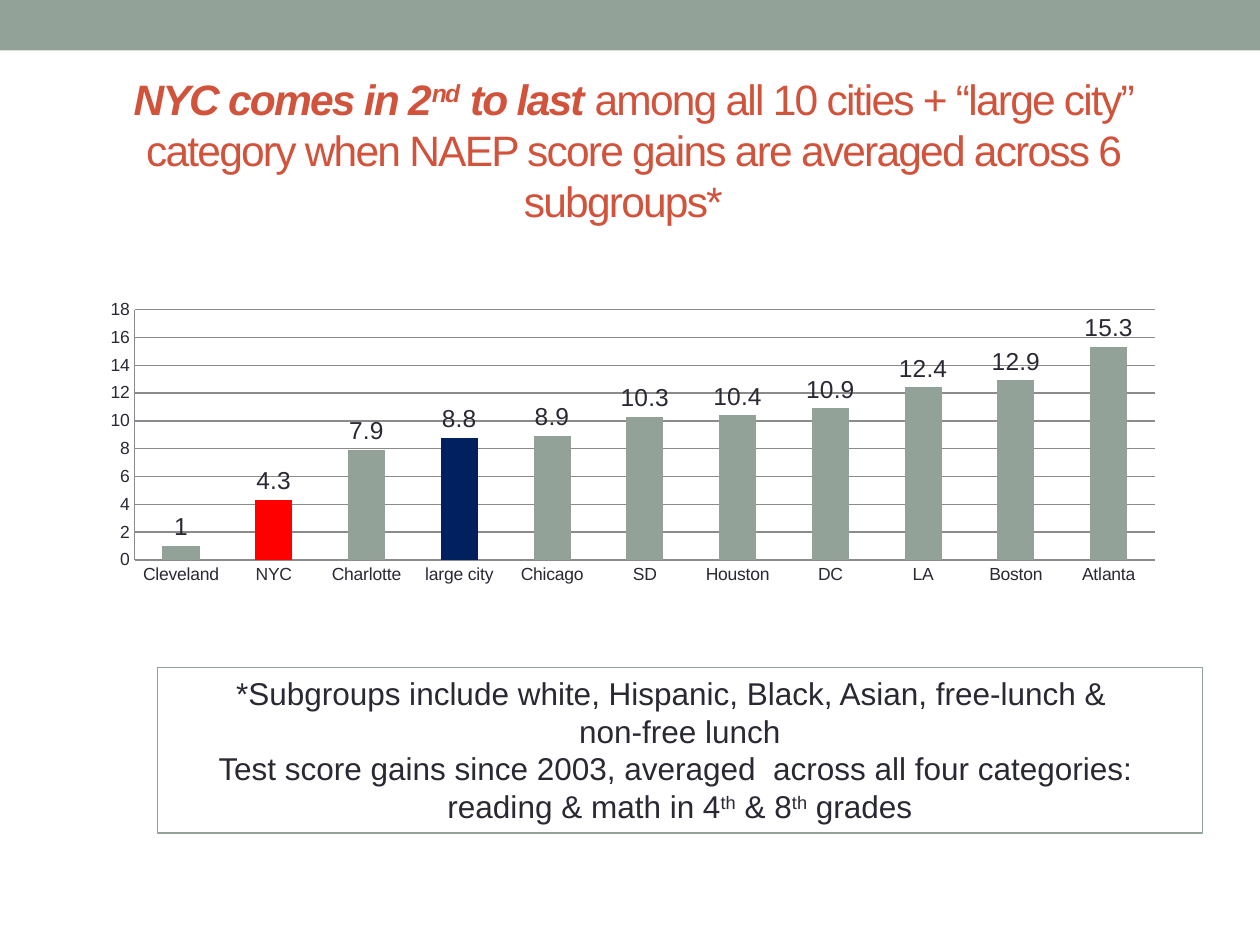
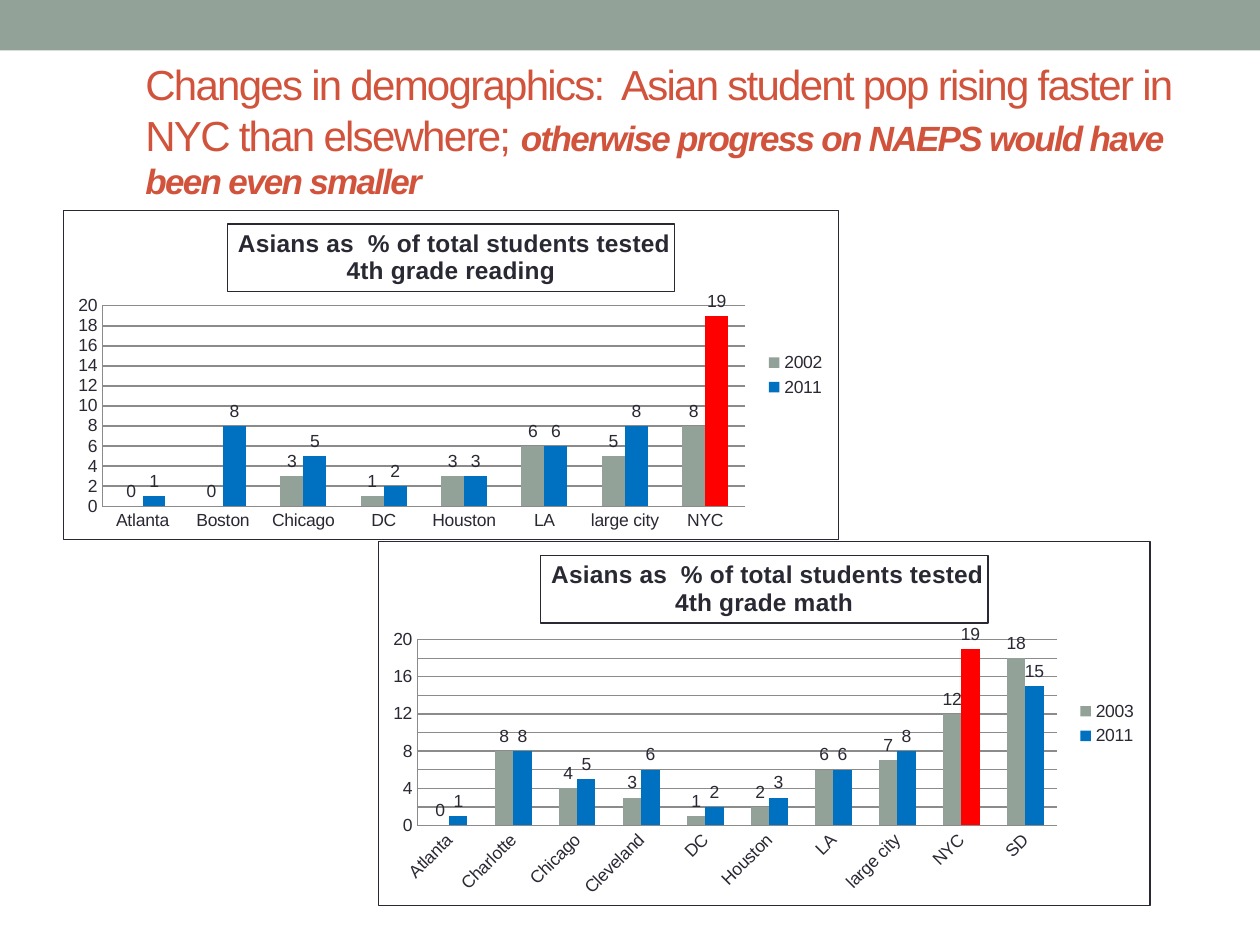
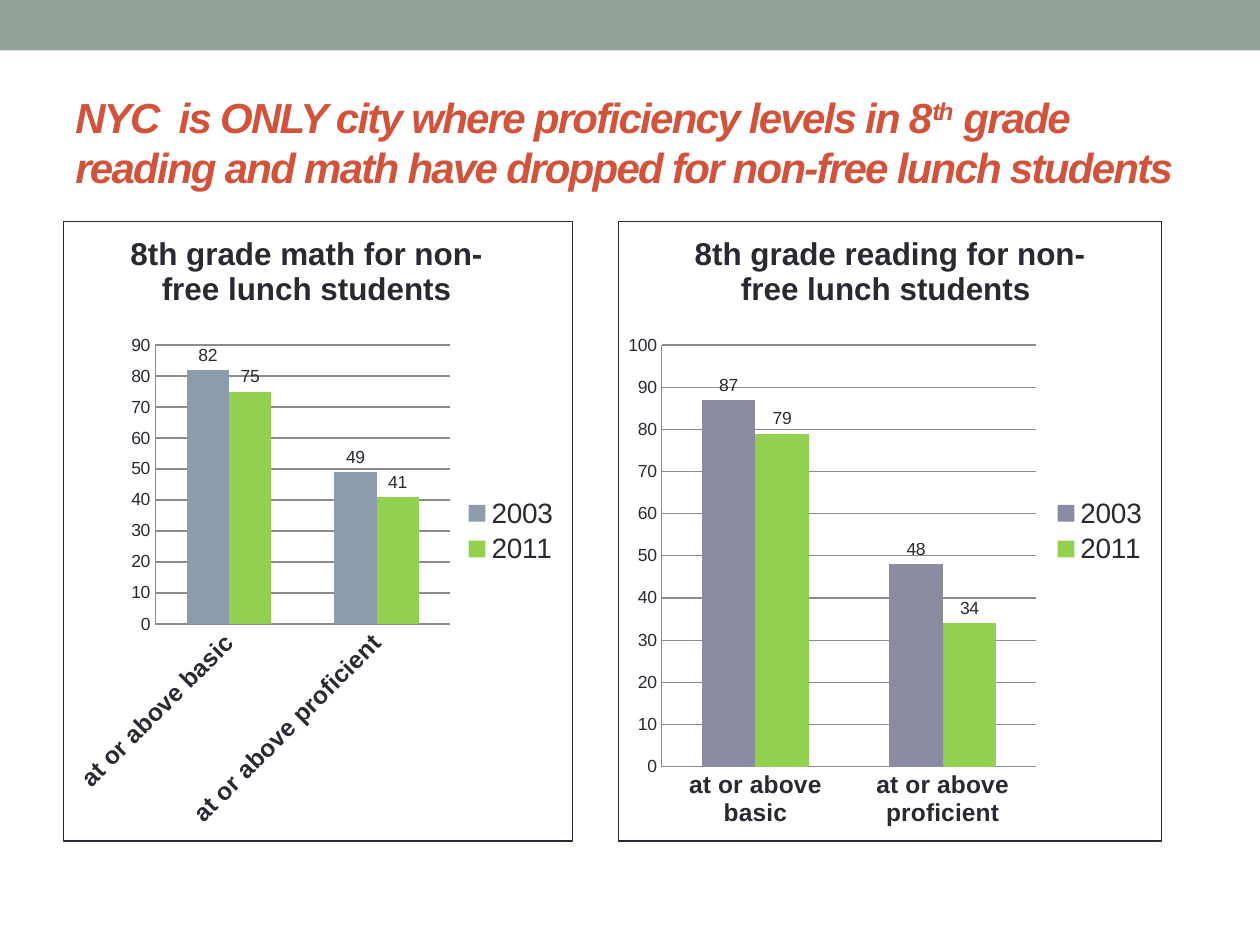
from lxml import etree
from pptx import Presentation
from pptx.chart.data import CategoryChartData
from pptx.dml.color import RGBColor
from pptx.enum import chart as ch, shapes, text
from pptx.oxml import ns
from pptx.util import Pt

# Shared look
FONT = "Arial"
SAGE, RUST, INK, GRID = "93A299", "D2533C", "292934", "8B8B8B"
RED, NAVY, BLUE, LIME = "FF0000", "002060", "0070C0", "92D050"
BASIC = ["at or above basic", "at or above proficient"]


def rgb(code):
    return RGBColor.from_string(code)


def paint(fill, code):
    fill.solid()
    fill.fore_color.rgb = rgb(code)


def stroke(line, code, width=0.75):
    line.color.rgb = rgb(code)
    line.width = Pt(width)


def style(font, size, code=INK, bold=False):
    font.name, font.size, font.bold = FONT, Pt(size), bold
    font.color.rgb = rgb(code)


# Text: each run is (words, size, marks); marks: b bold italic, s superscript
def write(par, runs, code, space=0):
    for words, size, marks in runs:
        run = par.add_run()
        run.text = words
        style(run.font, size, code, "b" in marks)
        run.font.italic = "b" in marks
        props = run._r.get_or_add_rPr()
        if "s" in marks:
            props.set("baseline", "30000")
        if space:
            props.set("spc", str(space * 100))


def add_title(slide, box, runs, align=text.PP_ALIGN.LEFT):
    frame = slide.shapes.add_textbox(*map(Pt, box)).text_frame
    frame.word_wrap = True
    frame.vertical_anchor = text.MSO_ANCHOR.MIDDLE
    par = frame.paragraphs[0]
    par.alignment = align
    write(par, runs, RUST, -1)


def add_rect(slide, box):
    rect = slide.shapes.add_shape(shapes.MSO_SHAPE.RECTANGLE, *map(Pt, box))
    rect.shadow.inherit = False
    return rect


def add_note(slide, box, lines):
    rect = add_rect(slide, box)
    rect.fill.background()
    stroke(rect.line, SAGE)
    frame = rect.text_frame
    frame.word_wrap = True
    frame.vertical_anchor = text.MSO_ANCHOR.TOP
    for i, runs in enumerate(lines):
        par = frame.add_paragraph() if i else frame.paragraphs[0]
        par.alignment = text.PP_ALIGN.CENTER
        write(par, runs, INK)


def new_slide(deck):
    slide = deck.slides.add_slide(deck.slide_layouts[6])
    band = add_rect(slide, (0, 0, 720, 28.8))
    paint(band.fill, SAGE)
    band.line.fill.background()
    return slide


# Chart parts that need XML
def child(parent, tag, val=None):
    node = etree.SubElement(parent, ns.qn(tag))
    if val is not None:
        node.set("val", str(val))
    return node


def place(parent, index, spots, inner=False):
    for old in parent.findall(ns.qn("c:layout")):
        parent.remove(old)
    layout = etree.Element(ns.qn("c:layout"))
    parent.insert(index, layout)
    manual = child(layout, "c:manualLayout")
    if inner:
        child(manual, "c:layoutTarget", "inner")
    for key in "xy":
        child(manual, f"c:{key}Mode", "edge")
    for key, val in zip("xywh", spots):
        child(manual, f"c:{key}", val)


def frame_chart(root):
    props = etree.Element(ns.qn("c:spPr"))
    line = child(props, "a:ln")
    line.set("w", str(Pt(0.75)))
    child(child(line, "a:solidFill"), "a:srgbClr", INK)
    root.find(ns.qn("c:chart")).addnext(props)


def add_heading(chart, root, lines, size, boxed, spot):
    head = chart.chart_title
    frame = head.text_frame
    for i, words in enumerate(lines):
        par = frame.add_paragraph() if i else frame.paragraphs[0]
        par.text = words
        style(par.font, size, bold=True)
    if boxed:
        stroke(head.format.line, INK)
    if spot:
        place(root.find(".//" + ns.qn("c:title")), 1, spot)


def add_bars(slide, box, cats, rows, plot, lines=(), size=14, boxed=False,
             spot=None, marks=None, top=20, step=2, label=10, legend=10,
             bold=False, turn=None):
    """Rows are (name, colour, values); marks map a point of the last row to a colour."""
    data = CategoryChartData()
    data.categories = cats
    for name, _, vals in rows:
        data.add_series(name, vals)
    chart = slide.shapes.add_chart(
        ch.XL_CHART_TYPE.COLUMN_CLUSTERED, *map(Pt, box), data).chart
    style(chart.font, 10)
    root = chart._chartSpace
    place(root.find(".//" + ns.qn("c:plotArea")), 0, plot, True)

    # Heading, border and legend
    chart.has_title = bool(lines)
    chart.has_legend = bool(lines)
    if lines:
        add_heading(chart, root, lines, size, boxed, spot)
        frame_chart(root)
        chart.legend.position = ch.XL_LEGEND_POSITION.RIGHT
        chart.legend.include_in_layout = False
        style(chart.legend.font, legend)

    # Axes
    for axis in (chart.category_axis, chart.value_axis):
        axis.major_tick_mark = axis.minor_tick_mark = ch.XL_TICK_MARK.NONE
        stroke(axis.format.line, GRID)
        style(axis.tick_labels.font, 10)
    if bold:
        style(chart.category_axis.tick_labels.font, 14, bold=True)
    if turn:
        body = root.find(".//" + ns.qn("c:catAx")).find(".//" + ns.qn("a:bodyPr"))
        body.set("rot", str(turn * 60000))
    axis = chart.value_axis
    axis.minimum_scale, axis.maximum_scale, axis.major_unit = 0, top, step
    stroke(axis.major_gridlines.format.line, GRID)

    # Bars
    bars = chart.plots[0]
    bars.gap_width, bars.overlap, bars.vary_by_categories = 150, 0, False
    for row, (_, code, _) in zip(bars.series, rows):
        paint(row.format.fill, code)
        tags = row.data_labels
        tags.show_value = True
        tags.position = ch.XL_LABEL_POSITION.OUTSIDE_END
        style(tags.font, label)
    for i, code in (marks or {}).items():
        paint(row.points[i].format.fill, code)


def gains(deck):
    slide = new_slide(deck)
    add_title(slide, (38, 28, 648, 115), [
        ("NYC comes in 2", 24.3, "b"), ("nd", 24.3, "bs"), (" to last ", 24.3, "b"),
        ("among all 10 cities + “large city” category when NAEP score gains "
         "are averaged across 6 subgroups*  ", 24.3, "")], text.PP_ALIGN.CENTER)
    add_bars(slide, (38, 142.5, 648, 265),
             ["Cleveland", "NYC", "Charlotte", "large city", "Chicago", "SD",
              "Houston", "DC", "LA", "Boston", "Atlanta"],
             [("Series 1", SAGE,
               [1, 4.3, 7.9, 8.8, 8.9, 10.3, 10.4, 10.9, 12.4, 12.9, 15.3])],
             (0.06, 0.13, 0.9, 0.54), marks={1: RED, 3: NAVY}, top=18, label=14)
    add_note(slide, (90, 381.5, 597, 94.5), [
        [("*Subgroups include white, Hispanic, Black, Asian, free-lunch &  ", 18, "")],
        [("non-free lunch", 18, "")],
        [("Test score gains since 2003, averaged  across all four categories: ", 18, "")],
        [("reading & math in 4", 18, ""), ("th", 18, "s"), (" & 8", 18, ""),
         ("th", 18, "s"), (" grades", 18, "")]])


def shares(deck):
    slide = new_slide(deck)
    add_title(slide, (76, 42, 608, 65), [
        ("Changes in demographics:  Asian student pop rising faster in NYC "
         "than elsewhere; ", 24, ""),
        ("otherwise progress on NAEPS would have been even smaller", 20, "b")])
    lead = " Asians as  % of total students tested"
    add_bars(slide, (36, 120, 443.5, 188.5),
             ["Atlanta", "Boston", "Chicago", "DC", "Houston", "LA", "large city", "NYC"],
             [("2002", SAGE, [0, 0, 3, 1, 3, 6, 5, 8]),
              ("2011", BLUE, [1, 8, 5, 2, 3, 6, 8, 19])],
             (0.05, 0.29, 0.83, 0.61), [lead, "4th grade reading"],
             boxed=True, marks={7: RED})
    add_bars(slide, (216, 309, 441.5, 209),
             ["Atlanta", "Charlotte", "Chicago", "Cleveland", "DC", "Houston",
              "LA", "large city", "NYC", "SD"],
             [("2003", SAGE, [0, 8, 4, 3, 1, 2, 6, 7, 12, 18]),
              ("2011", BLUE, [1, 8, 5, 6, 2, 3, 6, 8, 19, 15])],
             (0.05, 0.27, 0.83, 0.51), [lead, "4th grade math"],
             boxed=True, marks={8: RED}, turn=-45)


def levels(deck):
    slide = new_slide(deck)
    add_title(slide, (36, 42, 648, 78), [
        ("NYC  is ONLY city where proficiency levels in 8", 24, "b"), ("th", 24, "bs"),
        (" grade reading and math have dropped for non-free lunch students", 24, "b")])
    look = dict(size=18, step=10, legend=16, bold=True)
    add_bars(slide, (36, 126, 291.5, 355), BASIC,
             [("2003", "8C9CAD", [82, 49]), ("2011", LIME, [75, 41])],
             (0.18, 0.2, 0.58, 0.45), ["8th grade math for non-free lunch students"],
             spot=(0.12, 0.01), top=90, turn=-45, **look)
    add_bars(slide, (353, 126, 311, 355), BASIC,
             [("2003", "8A8AA3", [87, 48]), ("2011", LIME, [79, 34])],
             (0.08, 0.2, 0.69, 0.68), ["8th grade reading for non-free lunch students "],
             spot=(0.13, 0.01), top=100, **look)


def main():
    deck = Presentation()
    deck.slide_width, deck.slide_height = Pt(720), Pt(540)
    for build in (gains, shares, levels):
        build(deck)
    deck.save("out.pptx")


if __name__ == "__main__":
    main()
